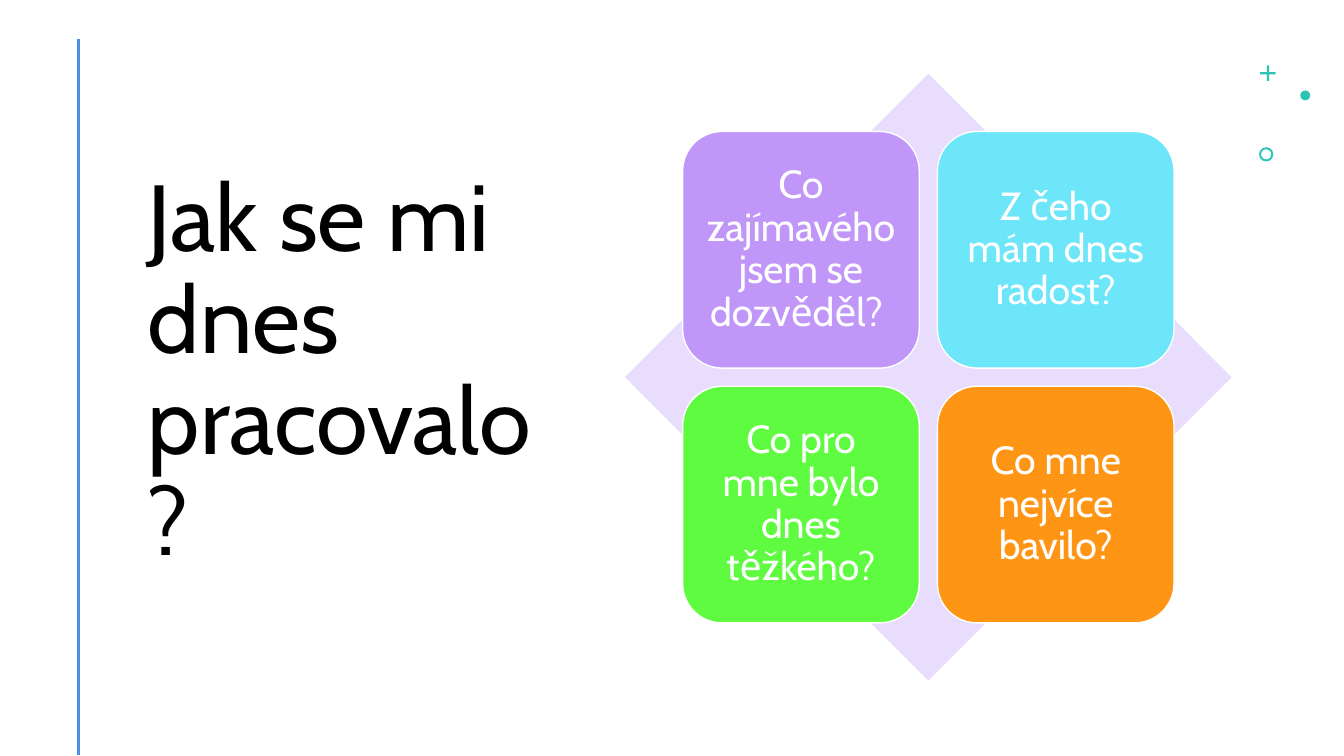
from dataclasses import dataclass

from lxml.etree import SubElement
from pptx import Presentation
from pptx.dml.color import RGBColor
from pptx.enum.shapes import MSO_CONNECTOR, MSO_SHAPE
from pptx.enum.text import MSO_ANCHOR, PP_ALIGN
from pptx.oxml.ns import qn
from pptx.util import Cm, Pt


@dataclass(frozen=True)
class Theme:
    font: str = "Cabin"
    title_size: int = 67
    tile_size: int = 28
    ink: str = "000000"
    paper: str = "FFFFFF"
    rule: str = "4F8DE3"
    accent: str = "2CC3B4"
    diamond: str = "E8DDFC"
    tiles: tuple = ("C097F8", "6DE6F9", "5FFB41", "FF9514")


THEME = Theme()
QUESTIONS = (
    "Co zajímavého jsem se dozvěděl? ",
    "Z čeho mám dnes radost?",
    "Co pro mne bylo dnes těžkého?",
    "Co mne nejvíce bavilo?",
)


def rgb(value):
    return RGBColor.from_string(value)


def add_filled(s, kind, left, top, size, color):
    sp = s.shapes.add_shape(kind, Cm(left), Cm(top), Cm(size), Cm(size))
    sp.shadow.inherit = False
    sp.fill.solid()
    sp.fill.fore_color.rgb = rgb(color)
    sp.line.fill.background()
    return sp


def write_text(sp, text, size, color, align):
    tf = sp.text_frame
    tf.word_wrap = True
    tf.vertical_anchor = MSO_ANCHOR.MIDDLE
    p = tf.paragraphs[0]
    p.text = text
    p.alignment = align
    p.line_spacing = 0.9
    p.font.name = THEME.font
    p.font.size = Pt(size)
    p.font.color.rgb = rgb(color)
    return tf


def add_title(s, left, top, width, height):
    sp = s.shapes.add_textbox(Cm(left), Cm(top), Cm(width), Cm(height))
    write_text(sp, "Jak se mi dnes pracovalo?", THEME.title_size, THEME.ink, PP_ALIGN.LEFT)


def add_rule(s, left, top, height):
    line = s.shapes.add_connector(
        MSO_CONNECTOR.STRAIGHT, Cm(left), Cm(top), Cm(left), Cm(top + height)
    )
    line.line.color.rgb = rgb(THEME.rule)
    line.line.width = Pt(2)
    SubElement(line._element.spPr, qn("a:effectLst"))


def add_ornaments(s, left, top):
    plus = add_filled(s, MSO_SHAPE.CROSS, left + 0.03, top, 0.39, THEME.accent)
    plus.adjustments[0] = 0.43
    add_filled(s, MSO_SHAPE.OVAL, left + 1.04, top + 0.63, 0.25, THEME.accent)
    ring = add_filled(s, MSO_SHAPE.DONUT, left, top + 2.06, 0.36, THEME.accent)
    ring.adjustments[0] = 0.14


def add_question_matrix(s, left, top, size):
    add_filled(s, MSO_SHAPE.DIAMOND, left, top, size, THEME.diamond)
    margin, tile, pitch = 0.095 * size, 0.39 * size, 0.42 * size
    for i, (question, color) in enumerate(zip(QUESTIONS, THEME.tiles)):
        row, col = divmod(i, 2)
        sp = add_filled(
            s,
            MSO_SHAPE.ROUNDED_RECTANGLE,
            left + margin + col * pitch,
            top + margin + row * pitch,
            tile,
            color,
        )
        sp.line.color.rgb = rgb(THEME.paper)
        sp.line.width = Pt(1)
        tf = write_text(sp, question, THEME.tile_size, THEME.paper, PP_ALIGN.CENTER)
        tf.margin_left = tf.margin_right = tf.margin_top = tf.margin_bottom = Cm(0.3)


def main():
    prs = Presentation()
    prs.slide_width, prs.slide_height = Cm(33.87), Cm(19.05)
    s = prs.slides.add_slide(prs.slide_layouts[6])
    s.background.fill.solid()
    s.background.fill.fore_color.rgb = rgb(THEME.paper)
    add_title(s, 3.48, 1.65, 10.95, 15.52)
    add_rule(s, 1.98, 0.98, 18.05)
    add_ornaments(s, 31.73, 1.65)
    add_question_matrix(s, 15.75, 1.86, 15.29)
    prs.save("out.pptx")


if __name__ == "__main__":
    main()
